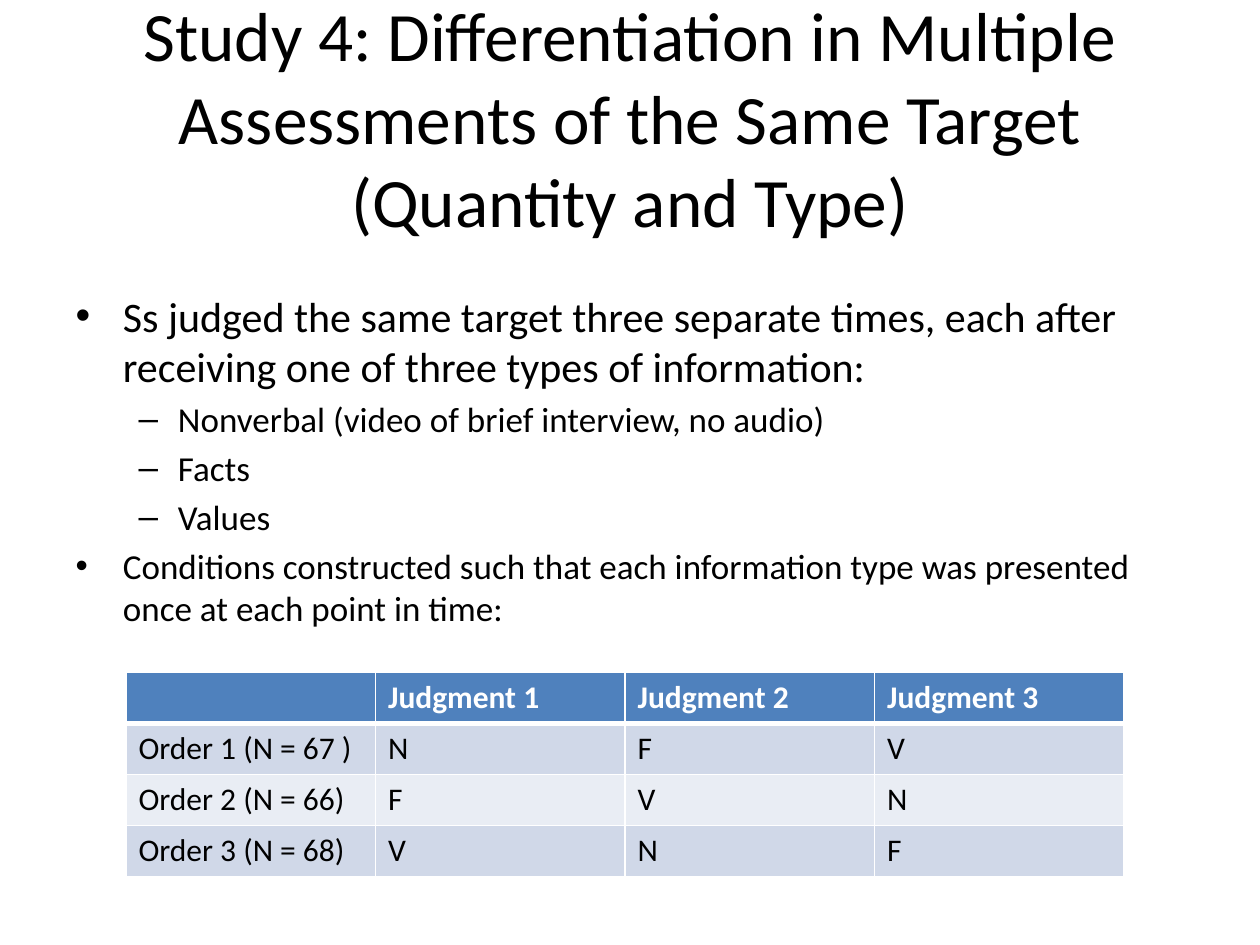
"""Build the Study 4 slide: title, design bullets and the table of judgment orders."""
from lxml.etree import Element, SubElement
from pptx import Presentation
from pptx.dml.color import RGBColor
from pptx.enum.text import MSO_ANCHOR, MSO_AUTO_SIZE, PP_ALIGN
from pptx.oxml.ns import qn
from pptx.util import Cm, Pt

FONT = "Calibri"
BLACK = RGBColor(0x00, 0x00, 0x00)
WHITE = RGBColor(0xFF, 0xFF, 0xFF)
HEADER_BLUE = RGBColor(0x4F, 0x81, 0xBD)
BANDS = (RGBColor(0xD0, 0xD8, 0xE8), RGBColor(0xE9, 0xED, 0xF4))

TITLE = "Study 4: Differentiation in Multiple Assessments of the Same Target (Quantity and Type)"
BULLETS = [
    (0, 24, "Ss judged the same target three separate times, each after "
            "receiving one of three types of information:"),
    (1, 20, "Nonverbal (video of brief interview, no audio)"),
    (1, 20, "Facts"),
    (1, 20, "Values"),
    (0, 20, "Conditions constructed such that each information type was "
            "presented once at each point in time:"),
]
ORDERS = [
    ("", "Judgment 1", "Judgment 2", "Judgment 3"),
    ("Order 1 (N = 67 )", "N", "F", "V"),
    ("Order 2 (N = 66)", "F", "V", "N"),
    ("Order 3 (N = 68)", "V", "N", "F"),
]
COLUMN_WIDTH, ROW_HEIGHT = Cm(5.03), Cm(1.03)


def place(shape, left, top, width, height):
    shape.left, shape.top = Cm(left), Cm(top)
    shape.width, shape.height = Cm(width), Cm(height)
    shape.text_frame.word_wrap = True
    shape.text_frame.auto_size = MSO_AUTO_SIZE.NONE


def add_text(paragraph, text, size, color=BLACK, bold=False):
    run = paragraph.add_run()
    run.text = text
    run.font.name, run.font.size = FONT, Pt(size)
    run.font.color.rgb, run.font.bold = color, bold


def set_borders(cell, bottom_width):
    properties = cell._tc.get_or_add_tcPr()
    widths = {"a:lnL": 1, "a:lnR": 1, "a:lnT": 1, "a:lnB": bottom_width}
    for position, (side, width) in enumerate(widths.items()):
        line = Element(qn(side), w=str(Pt(width)))
        fill = SubElement(line, qn("a:solidFill"))
        SubElement(fill, qn("a:srgbClr"), val=str(WHITE))
        properties.insert(position, line)


def add_title(slide):
    title = slide.shapes.title
    place(title, 1.27, 0.76, 22.86, 3.18)
    title.text_frame.vertical_anchor = MSO_ANCHOR.MIDDLE
    paragraph = title.text_frame.paragraphs[0]
    paragraph.alignment = PP_ALIGN.CENTER
    add_text(paragraph, TITLE, 39.6)


def add_bullets(slide):
    body = slide.placeholders[1]
    place(body, 1.27, 5.72, 22.86, 12.57)
    frame = body.text_frame
    for index, (level, size, text) in enumerate(BULLETS):
        paragraph = frame.add_paragraph() if index else frame.paragraphs[0]
        paragraph.level = level
        add_text(paragraph, text, size)


def add_orders(slide):
    rows, columns = len(ORDERS), len(ORDERS[0])
    table = slide.shapes.add_table(rows, columns, Cm(2.54), Cm(13.55),
                                   COLUMN_WIDTH * columns, ROW_HEIGHT * rows).table
    for column in table.columns:
        column.width = COLUMN_WIDTH
    for row_index, values in enumerate(ORDERS):
        table.rows[row_index].height = ROW_HEIGHT
        header = row_index == 0
        for column_index, value in enumerate(values):
            cell = table.cell(row_index, column_index)
            cell.fill.solid()
            cell.fill.fore_color.rgb = HEADER_BLUE if header else BANDS[(row_index - 1) % 2]
            set_borders(cell, 3 if header else 1)
            if value:
                add_text(cell.text_frame.paragraphs[0], value, 18,
                         WHITE if header else BLACK, header)


def main():
    presentation = Presentation()
    presentation.slide_width, presentation.slide_height = Cm(25.4), Cm(19.05)
    slide = presentation.slides.add_slide(presentation.slide_layouts[1])
    add_title(slide)
    add_bullets(slide)
    add_orders(slide)
    presentation.save("out.pptx")


if __name__ == "__main__":
    main()
